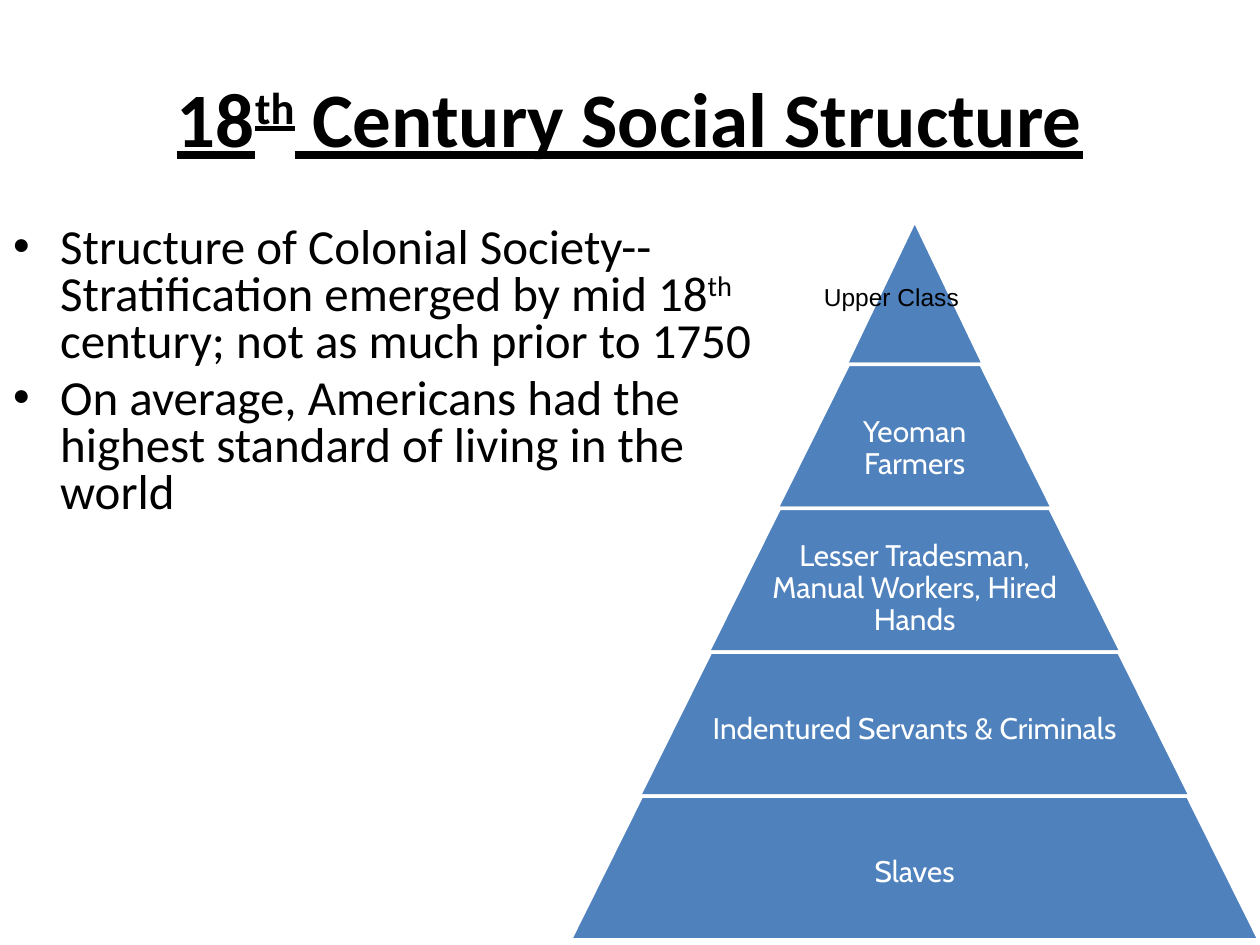
from dataclasses import dataclass

from lxml.etree import SubElement
from pptx import Presentation
from pptx.dml.color import RGBColor as Rgb
from pptx.enum.shapes import MSO_SHAPE as Shape
from pptx.enum.text import MSO_ANCHOR as Anchor, PP_ALIGN as Align
from pptx.oxml.ns import qn
from pptx.util import Inches, Pt


@dataclass(frozen=True)
class Theme:
    ink: str = "000000"
    paper: str = "FFFFFF"
    blue: str = "4F81BD"
    head: int = 44
    body: int = 28
    tier: int = 17
    label: int = 14


@dataclass(frozen=True)
class Run:
    text: str
    sup: bool = False


@dataclass(frozen=True)
class Tier:
    text: str
    slant: float = 0.497


THEME = Theme()
TITLE = [Run("18"), Run("th", True), Run(" Century Social Structure")]
POINTS = [
    [
        Run("Structure of Colonial Society--Stratification emerged by mid 18"),
        Run("th", True),
        Run(" century; not as much prior to 1750"),
    ],
    [Run("On average, Americans had the highest standard of living in the world")],
]
TIERS = [
    Tier("", 0.5),
    Tier("Yeoman Farmers"),
    Tier("Lesser Tradesman, Manual Workers, Hired Hands"),
    Tier("Indentured Servants & Criminals"),
    Tier("Slaves"),
]
MID, TOP, STEP, RISE = 7.26, 1.75, 1.094, 1.142


def write(para, runs: list[Run], face: str, size: int, color: str, strong: bool = False) -> None:
    """Add styled runs to a paragraph."""
    for item in runs:
        run = para.add_run()
        run.text = item.text
        font = run.font
        font.name, font.size = face, Pt(size)
        font.color.rgb = Rgb.from_string(color)
        font.bold = font.underline = strong
        if item.sup:
            font._element.set("baseline", "30000")


def pad(frame, side: float, edge: float) -> None:
    """Set wrapping and the inner margins of a text frame."""
    frame.word_wrap = True
    frame.margin_left = frame.margin_right = Inches(side)
    frame.margin_top = frame.margin_bottom = Inches(edge)


def box(slide, left: float, top: float, width: float, height: float, edge: float):
    """Add a text box and return its frame."""
    area = slide.shapes.add_textbox(Inches(left), Inches(top), Inches(width), Inches(height))
    pad(area.text_frame, 0.1, edge)
    return area.text_frame


def bullet(para) -> None:
    """Give a paragraph a hanging round bullet."""
    props = para._p.get_or_add_pPr()
    props.set("marL", str(Inches(0.38)))
    props.set("indent", str(-Inches(0.38)))
    color = SubElement(props, qn("a:buClr"))
    SubElement(color, qn("a:srgbClr"), val=THEME.ink)
    SubElement(props, qn("a:buSzPct"), val="61000")
    SubElement(props, qn("a:buFont"), typeface="Arial")
    SubElement(props, qn("a:buChar"), char="●")


def head(slide) -> None:
    """Place and fill the title."""
    title = slide.shapes.title
    title.left, title.top = Inches(0.5), Inches(0.3)
    title.width, title.height = Inches(9), Inches(1.25)
    frame = title.text_frame
    pad(frame, 0.1, 0.05)
    frame.vertical_anchor = Anchor.MIDDLE
    para = frame.paragraphs[0]
    para.alignment = Align.CENTER
    write(para, TITLE, "Calibri", THEME.head, THEME.ink, True)


def notes(slide) -> None:
    """Draw the bulleted points."""
    frame = box(slide, 0, 1.75, 6.33, 4.95, 0.05)
    for i, runs in enumerate(POINTS):
        para = frame.add_paragraph() if i else frame.paragraphs[0]
        para.line_spacing, para.space_before = 0.8, Pt(5.6)
        bullet(para)
        write(para, runs, "Calibri", THEME.body, THEME.ink)


def layer(group, tier: Tier, row: int) -> None:
    """Draw one tier of the pyramid."""
    width = STEP * (row + 1)
    shape = group.shapes.add_shape(
        Shape.TRAPEZOID, Inches(MID - width / 2), Inches(TOP + RISE * row), Inches(width), Inches(RISE)
    )
    shape.adjustments[0] = tier.slant
    shape.shadow.inherit = False
    shape.fill.solid()
    shape.fill.fore_color.rgb = Rgb.from_string(THEME.blue)
    shape.line.color.rgb = Rgb.from_string(THEME.paper)
    shape.line.width = Pt(2)
    if tier.text:
        frame = shape.text_frame
        pad(frame, 0.02, 0.02)
        frame.vertical_anchor = Anchor.MIDDLE
        para = frame.paragraphs[0]
        para.alignment = Align.CENTER
        para.line_spacing, para.space_after = 0.9, Pt(6)
        write(para, [Run(tier.text)], "Cabin", THEME.tier, THEME.paper)


def main() -> None:
    """Build and save the slide."""
    deck = Presentation()
    deck.slide_width, deck.slide_height = Inches(10), Inches(7.5)
    slide = deck.slides.add_slide(deck.slide_layouts[5])
    head(slide)
    notes(slide)
    group = slide.shapes.add_group_shape()
    for row, tier in enumerate(TIERS):
        layer(group, tier, row)
    label = box(slide, 6.44, 2.14, 1.83, 0.48, 0.1)
    write(label.paragraphs[0], [Run("Upper Class")], "Arial", THEME.label, THEME.ink)
    deck.save("out.pptx")


if __name__ == "__main__":
    main()
